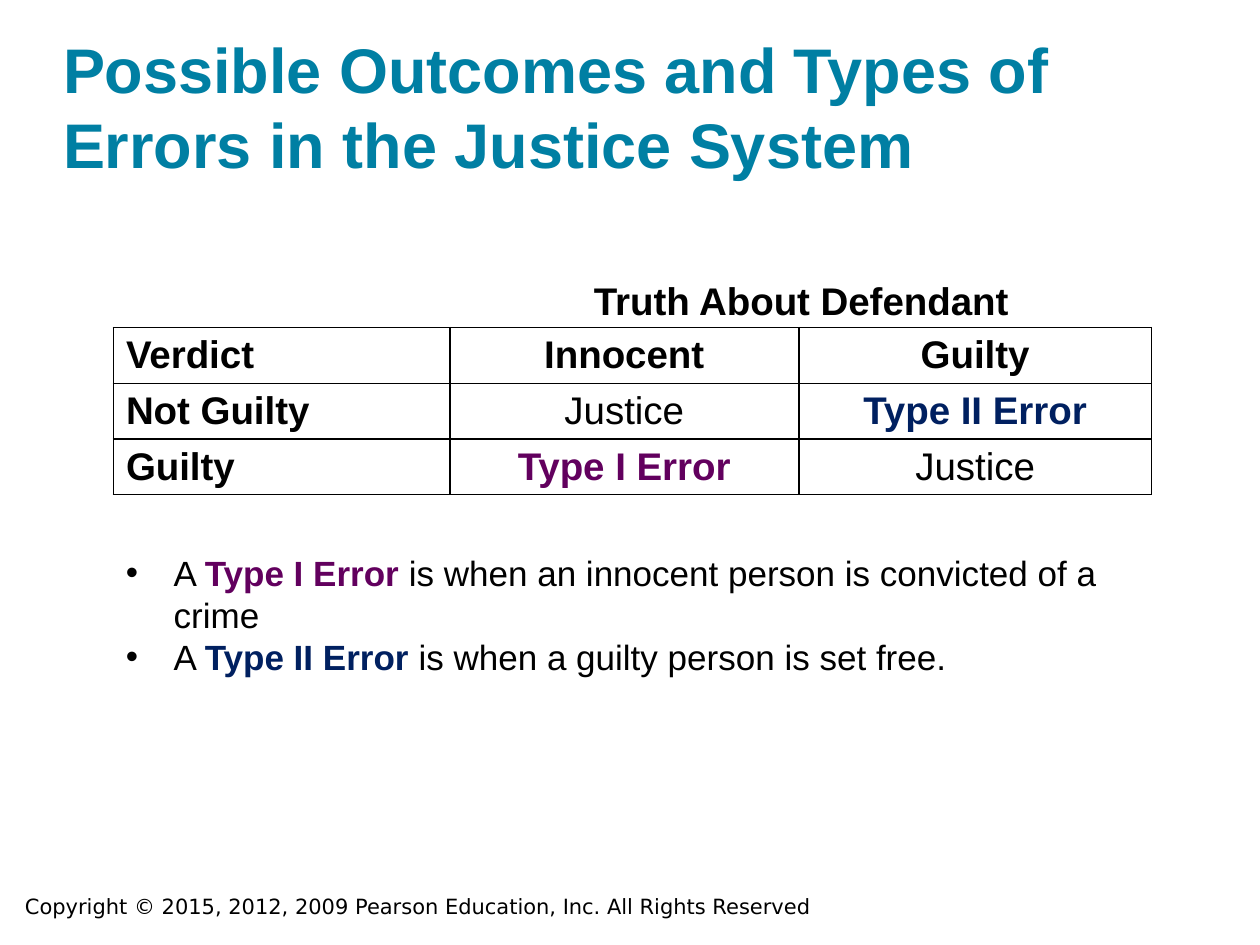
import pptx
import pptx.dml.color
import pptx.enum.text
import pptx.oxml
import pptx.oxml.ns
import pptx.util
from pptx.util import Inches

COLORS = {"black": "000000", "white": "FFFFFF", "title": "007FA3",
          "type_one": "62005E", "type_two": "002060"}
ALIGN = pptx.enum.text.PP_ALIGN
ANCHOR = pptx.enum.text.MSO_ANCHOR
NO_MARGINS = (0, 0, 0, 0)
TEXT_MARGINS = (0.1, 0.05, 0.1, 0.05)


def rgb(name):
    return pptx.dml.color.RGBColor.from_string(COLORS[name])


def add_span(para, text, size, color="black", bold=False, name="Arial"):
    span = para.add_run()
    span.text = text
    formats = {"size": pptx.util.Pt(size), "bold": bold, "name": name}
    for key, value in formats.items():
        setattr(span.font, key, value)
    span.font.color.rgb = rgb(color)


def format_frame(frame, margins, anchor=ANCHOR.TOP):
    left, top, right, bottom = (Inches(margin) for margin in margins)
    formats = {"margin_left": left, "margin_top": top, "margin_right": right,
               "margin_bottom": bottom, "vertical_anchor": anchor,
               "word_wrap": True, "auto_size": pptx.enum.text.MSO_AUTO_SIZE.NONE}
    for key, value in formats.items():
        setattr(frame, key, value)


def add_text_box(page, place, margins=TEXT_MARGINS):
    box = page.shapes.add_textbox(*(Inches(length) for length in place))
    format_frame(box.text_frame, margins)
    return box.text_frame


def set_title(page, text):
    title = page.shapes.title
    place = {"left": 0.5, "top": 0.24, "width": 9, "height": 1.2}
    for key, value in place.items():
        setattr(title, key, Inches(value))
    format_frame(title.text_frame, NO_MARGINS, ANCHOR.BOTTOM)
    para = title.text_frame.paragraphs[0]
    para.alignment = ALIGN.LEFT
    add_span(para, text, 36, "title", bold=True)


def add_borders(cell):
    properties = cell._tc.get_or_add_tcPr()
    for position, side in enumerate(("lnL", "lnR", "lnT", "lnB")):
        properties.insert(position, pptx.oxml.parse_xml(
            f'<a:{side} {pptx.oxml.ns.nsdecls("a")} w="12700"><a:solidFill>'
            f'<a:srgbClr val="{COLORS["black"]}"/></a:solidFill></a:{side}>'))


def add_verdict_table(page, rows):
    widths = (2.67, 2.77, 2.8)
    row_height = 0.41
    table = page.shapes.add_table(
        len(rows), len(widths), Inches(0.9), Inches(2.6),
        Inches(sum(widths)), Inches(row_height * len(rows))).table
    for column, width in zip(table.columns, widths):
        column.width = Inches(width)
    for row_index, row in enumerate(rows):
        table.rows[row_index].height = Inches(row_height)
        for column_index, (text, color, bold) in enumerate(row):
            cell = table.cell(row_index, column_index)
            is_label = column_index == 0
            cell.fill.solid()
            cell.fill.fore_color.rgb = rgb("white")
            add_borders(cell)
            if is_label and row_index > 0:
                cell.vertical_anchor = ANCHOR.MIDDLE
            para = cell.text_frame.paragraphs[0]
            para.alignment = ALIGN.LEFT if is_label else ALIGN.CENTER
            add_span(para, text, 22, color, bold)


def add_bullet(para):
    properties = para._p.get_or_add_pPr()
    indent = Inches(0.38)
    properties.set("marL", str(indent))
    properties.set("indent", str(-indent))
    for tag in ('buFont typeface="Arial"', 'buChar char="•"'):
        properties.append(pptx.oxml.parse_xml(
            f'<a:{tag} {pptx.oxml.ns.nsdecls("a")}/>'))


def add_definitions(page, definitions):
    frame = add_text_box(page, (0.9, 4.33, 8.25, 1.11))
    for index, (term, color, meaning) in enumerate(definitions):
        para = frame.add_paragraph() if index else frame.paragraphs[0]
        add_bullet(para)
        add_span(para, "A ", 20)
        add_span(para, term + " ", 20, color, bold=True)
        add_span(para, meaning, 20)


def main():
    deck = pptx.Presentation()
    deck.slide_width, deck.slide_height = Inches(10), Inches(7.5)
    page = deck.slides.add_slide(deck.slide_layouts.get_by_name("Title Only"))

    # Title
    set_title(page, "Possible Outcomes and Types of Errors in the Justice System")

    # Table with its heading
    heading = add_text_box(page, (3.58, 2.2, 5.56, 0.33), NO_MARGINS).paragraphs[0]
    heading.alignment = ALIGN.CENTER
    add_span(heading, "Truth About Defendant", 22, bold=True)
    justice = ("Justice", "black", False)
    add_verdict_table(page, [
        [(text, "black", True) for text in ("Verdict", "Innocent", "Guilty")],
        [("Not Guilty", "black", True), justice, ("Type II Error", "type_two", True)],
        [("Guilty", "black", True), ("Type I Error", "type_one", True), justice],
    ])

    # Definitions of the two errors
    add_definitions(page, [
        ("Type I Error", "type_one",
         "is when an innocent person is convicted of a crime"),
        ("Type II Error", "type_two", "is when a guilty person is set free."),
    ])

    # Copyright line
    footer = add_text_box(page, (0.1, 7.04, 7.83, 0.3)).paragraphs[0]
    add_span(footer, "Copyright © 2015, 2012, 2009 Pearson Education, Inc. "
             "All Rights Reserved", 12, name="DejaVu Sans")

    deck.save("out.pptx")


if __name__ == "__main__":
    main()
